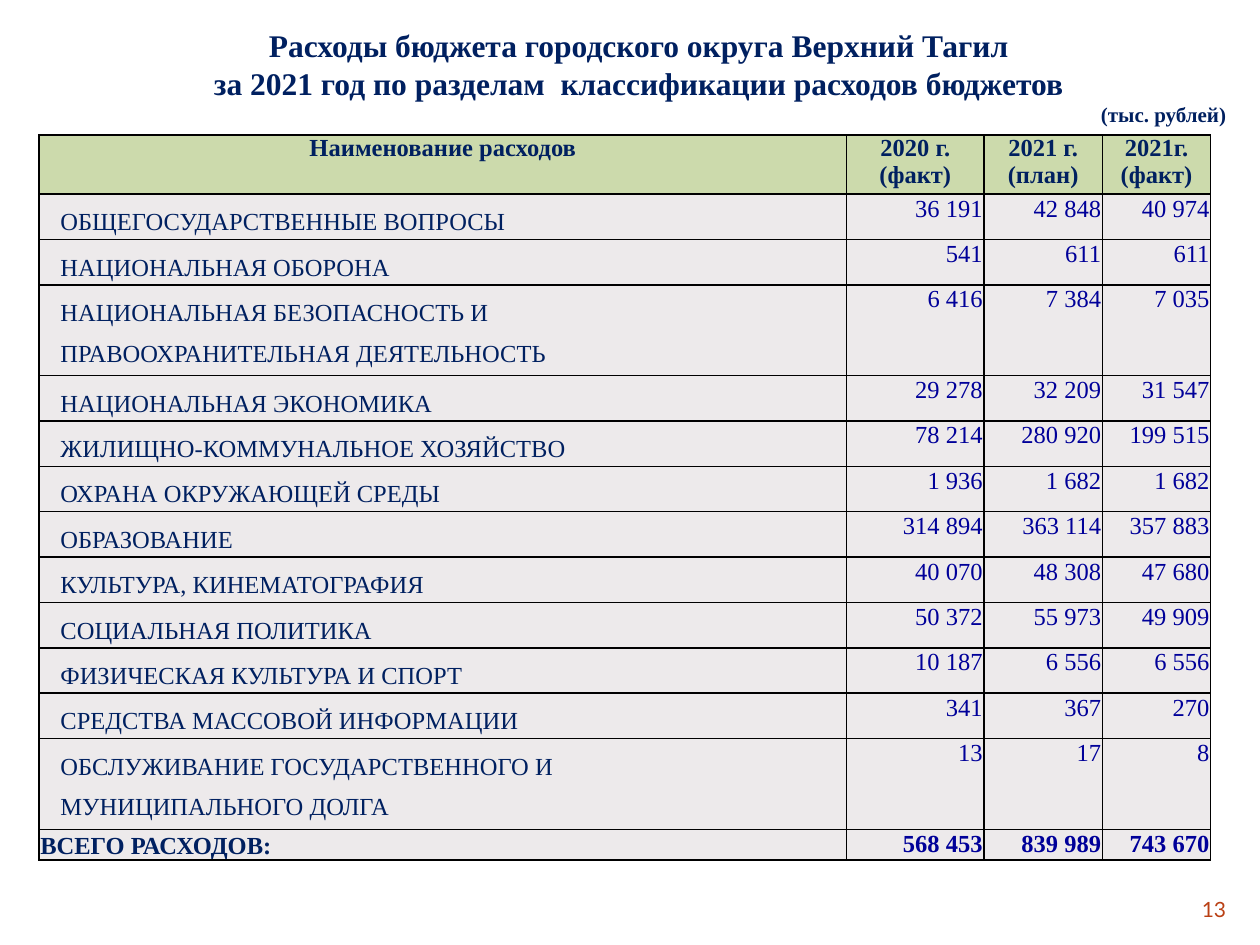
import pptx
import pptx.dml.color
import pptx.enum.text
import pptx.oxml
import pptx.oxml.ns
import pptx.util

Inches = pptx.util.Inches
Pt = pptx.util.Pt
RGBColor = pptx.dml.color.RGBColor
ALIGN = pptx.enum.text.PP_ALIGN
ANCHOR = pptx.enum.text.MSO_ANCHOR

NAVY = RGBColor(0x00, 0x20, 0x60)
BLUE = RGBColor(0x00, 0x00, 0x99)
RUST = RGBColor(0xBA, 0x40, 0x14)
GREEN = RGBColor(0xCC, 0xDA, 0xAC)
GREY = RGBColor(0xE9, 0xE6, 0xE7)
SERIF = "Times New Roman"

TITLE_LINES = [
    ("Расходы бюджета городского округа Верхний Тагил", 18, ALIGN.CENTER),
    ("за 2021 год по разделам  классификации расходов бюджетов", 18, ALIGN.CENTER),
    ("(тыс. рублей)", 12, ALIGN.RIGHT),
]
HEADERS = ["Наименование расходов", "2020 г.\n(факт)", "2021 г.\n(план)", "2021г.\n(факт)"]
EXPENSES = [
    ("ОБЩЕГОСУДАРСТВЕННЫЕ ВОПРОСЫ", "36 191", "42 848", "40 974"),
    ("НАЦИОНАЛЬНАЯ ОБОРОНА", "541", "611", "611"),
    ("НАЦИОНАЛЬНАЯ БЕЗОПАСНОСТЬ И\nПРАВООХРАНИТЕЛЬНАЯ ДЕЯТЕЛЬНОСТЬ", "6 416", "7 384", "7 035"),
    ("НАЦИОНАЛЬНАЯ ЭКОНОМИКА", "29 278", "32 209", "31 547"),
    ("ЖИЛИЩНО-КОММУНАЛЬНОЕ ХОЗЯЙСТВО", "78 214", "280 920", "199 515"),
    ("ОХРАНА ОКРУЖАЮЩЕЙ СРЕДЫ", "1 936", "1 682", "1 682"),
    ("ОБРАЗОВАНИЕ", "314 894", "363 114", "357 883"),
    ("КУЛЬТУРА, КИНЕМАТОГРАФИЯ", "40 070", "48 308", "47 680"),
    ("СОЦИАЛЬНАЯ ПОЛИТИКА", "50 372", "55 973", "49 909"),
    ("ФИЗИЧЕСКАЯ КУЛЬТУРА И СПОРТ", "10 187", "6 556", "6 556"),
    ("СРЕДСТВА МАССОВОЙ ИНФОРМАЦИИ", "341", "367", "270"),
    ("ОБСЛУЖИВАНИЕ ГОСУДАРСТВЕННОГО И\nМУНИЦИПАЛЬНОГО ДОЛГА", "13", "17", "8"),
]
TOTAL = ("ВСЕГО РАСХОДОВ:", "568 453", "839 989", "743 670")
COLUMN_WIDTHS = [6.41, 1.09, 0.94, 0.86]
HEADER_HEIGHT, LINE_HEIGHT, TOTAL_HEIGHT = 0.47, 0.36, 0.24


def format_paragraph(paragraph, size, color, align, font_name=SERIF, bold=False):
    paragraph.alignment = align
    for run in paragraph.runs:
        run.font.name = font_name
        run.font.size = Pt(size)
        run.font.bold = bold
        run.font.color.rgb = color


def add_text_box(slide, left, top, width, height):
    box = slide.shapes.add_textbox(Inches(left), Inches(top), Inches(width), Inches(height))
    box.text_frame.word_wrap = True
    return box.text_frame


def add_title(slide, left, top, width, height):
    frame = add_text_box(slide, left, top, width, height)
    frame.text = "\n".join(text for text, _, _ in TITLE_LINES)
    for paragraph, (_, size, align) in zip(frame.paragraphs, TITLE_LINES):
        format_paragraph(paragraph, size, NAVY, align, bold=True)


def add_page_number(slide, left, top, width, height):
    frame = add_text_box(slide, left, top, width, height)
    frame.vertical_anchor = ANCHOR.MIDDLE
    frame.margin_top = frame.margin_bottom = 0
    frame.text = "13"
    format_paragraph(frame.paragraphs[0], 12, RUST, ALIGN.RIGHT, font_name="Lato")


def set_borders(cell):
    properties = cell._tc.get_or_add_tcPr()
    for side in ("lnL", "lnR", "lnT", "lnB"):
        properties.append(pptx.oxml.parse_xml(
            f'<a:{side} {pptx.oxml.ns.nsdecls("a")} w="12700"><a:solidFill>'
            f'<a:srgbClr val="000000"/></a:solidFill></a:{side}>'))


def set_opacity(cell, percent):
    color = cell._tc.tcPr.find(".//" + pptx.oxml.ns.qn("a:solidFill") + "[last()]")
    fill = cell._tc.tcPr.findall(pptx.oxml.ns.qn("a:solidFill"))[0]
    color = fill[0]
    color.append(pptx.oxml.parse_xml(
        f'<a:alpha {pptx.oxml.ns.nsdecls("a")} val="{percent * 1000}"/>'))


def fill_cell(cell, text, fill, color, align, bold=False, side_margin=0.01, top_margin=0.01):
    set_borders(cell)
    cell.fill.solid()
    cell.fill.fore_color.rgb = fill
    cell.margin_left = cell.margin_right = Inches(side_margin)
    cell.margin_top, cell.margin_bottom = Inches(top_margin), 0
    cell.text_frame.text = text
    for paragraph in cell.text_frame.paragraphs:
        format_paragraph(paragraph, 14, color, align, bold=bold)


def indent_category(cell):
    for paragraph in cell.text_frame.paragraphs:
        paragraph.line_spacing = 1.5
        paragraph._p.get_or_add_pPr().set("marL", str(Inches(0.16)))


def add_expense_table(slide, left, top, width, height):
    rows = [*EXPENSES, TOTAL]
    table = slide.shapes.add_table(
        len(rows) + 1, len(HEADERS),
        Inches(left), Inches(top), Inches(width), Inches(height)).table
    table.first_row = table.horz_banding = False
    for column, column_width in zip(table.columns, COLUMN_WIDTHS):
        column.width = Inches(column_width)

    table.rows[0].height = Inches(HEADER_HEIGHT)
    for index, header in enumerate(HEADERS):
        fill_cell(table.cell(0, index), header, GREEN, NAVY, ALIGN.CENTER,
                  bold=True, side_margin=0.05, top_margin=0)

    for row_index, values in enumerate(rows, start=1):
        is_total = values is TOTAL
        lines = values[0].count("\n") + 1
        table.rows[row_index].height = Inches(TOTAL_HEIGHT if is_total else lines * LINE_HEIGHT)
        for index, value in enumerate(values):
            cell = table.cell(row_index, index)
            color, align = (BLUE, ALIGN.RIGHT) if index else (NAVY, ALIGN.LEFT)
            fill_cell(cell, value, GREY, color, align, bold=is_total)
            set_opacity(cell, 81)
        label = table.cell(row_index, 0)
        if is_total:
            label.vertical_anchor = ANCHOR.BOTTOM
        else:
            indent_category(label)


def main():
    presentation = pptx.Presentation()
    presentation.slide_width, presentation.slide_height = Inches(10), Inches(7.5)
    slide = presentation.slides.add_slide(presentation.slide_layouts[6])
    add_page_number(slide, 9, 7.08, 0.83, 0.27)
    add_title(slide, 0.31, 0.16, 9.52, 0.91)
    add_expense_table(slide, 0.31, 1.07, 9.3, 5.74)
    presentation.save("out.pptx")


if __name__ == "__main__":
    main()
